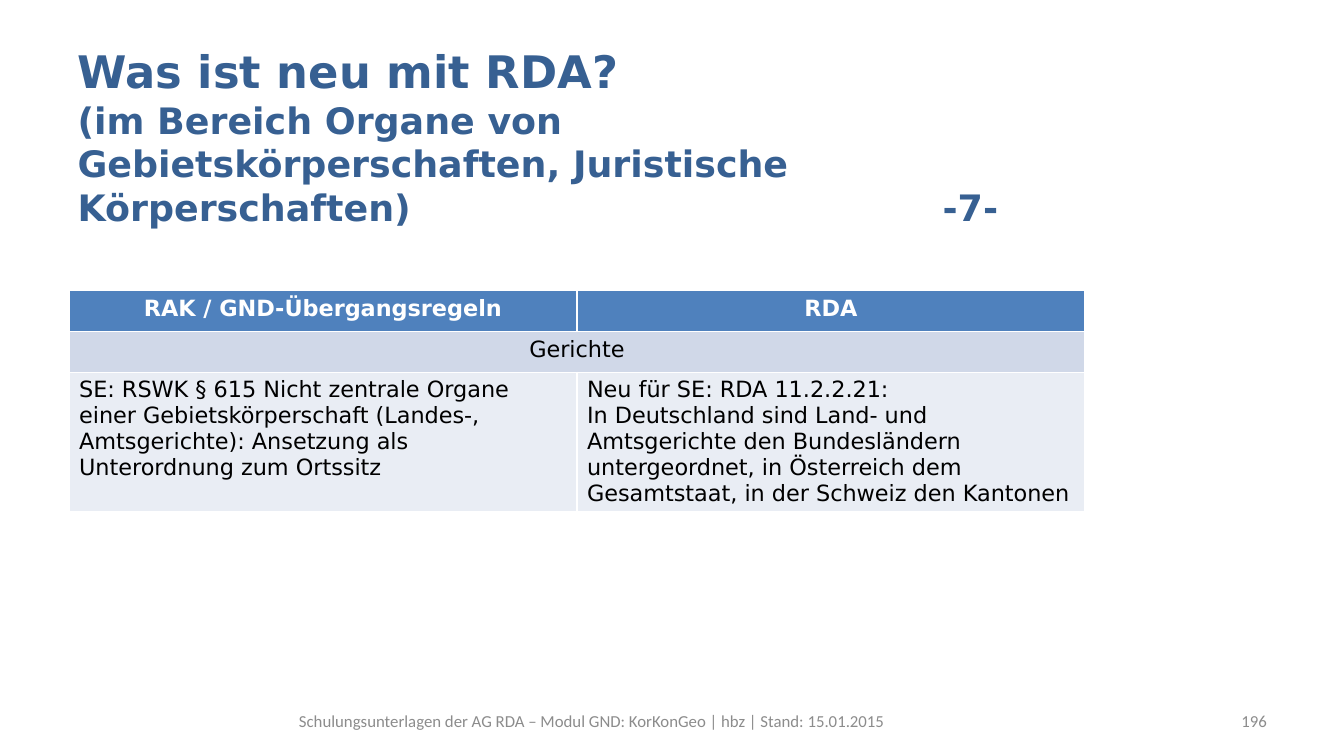
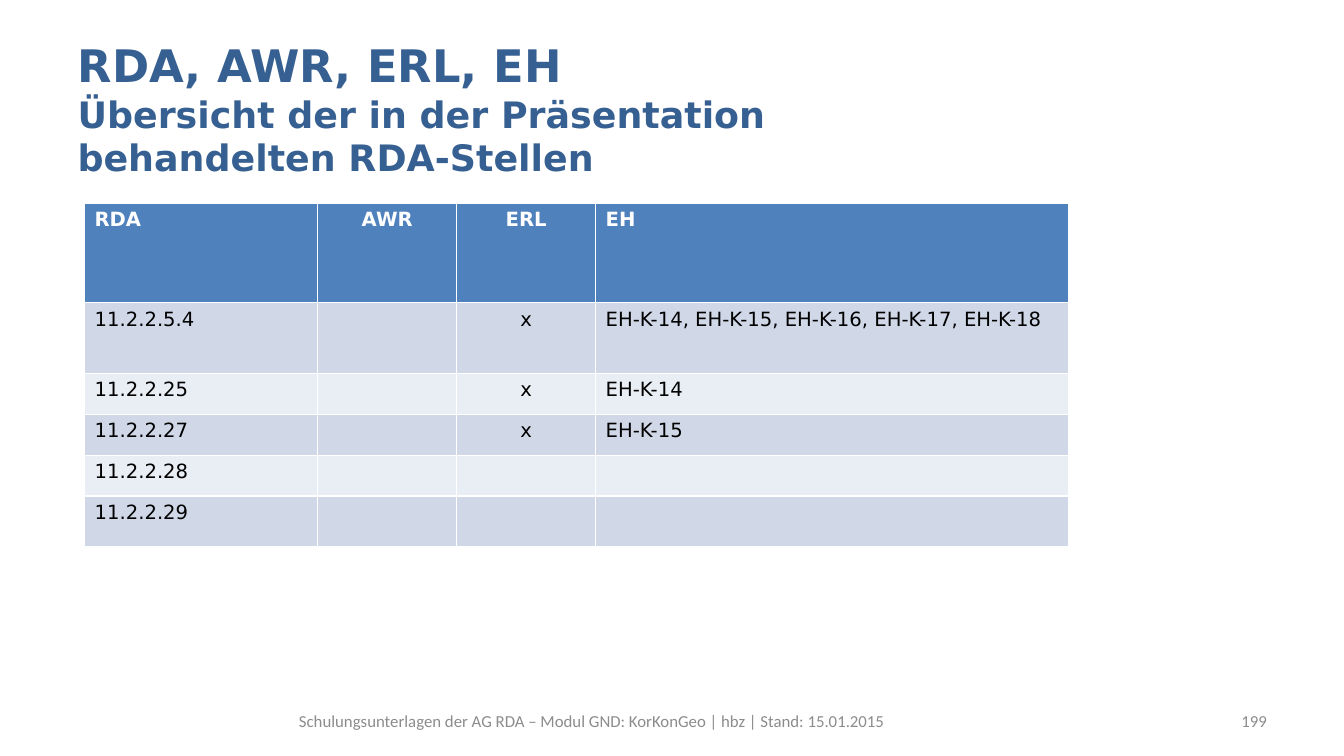
from lxml import etree
from pptx import Presentation
from pptx.dml.color import RGBColor
from pptx.enum.text import MSO_ANCHOR, MSO_AUTO_SIZE, PP_ALIGN
from pptx.oxml.ns import qn
from pptx.util import Cm, Pt

LEFT, CENTER, RIGHT = PP_ALIGN.LEFT, PP_ALIGN.CENTER, PP_ALIGN.RIGHT
MIDDLE = MSO_ANCHOR.MIDDLE
NO_AUTOFIT = MSO_AUTO_SIZE.NONE

TITLE_BLUE = RGBColor(0x37, 0x60, 0x92)
HEADER_BLUE = RGBColor(0x4F, 0x81, 0xBD)
BAND_DARK = RGBColor(0xD0, 0xD8, 0xE8)
BAND_LIGHT = RGBColor(0xE9, 0xED, 0xF4)
FOOTER_GREY = RGBColor(0x8C, 0x8C, 0x8C)
WHITE = RGBColor(0xFF, 0xFF, 0xFF)
BLACK = RGBColor(0x00, 0x00, 0x00)

TEXT_FONT = "DejaVu Sans"
FOOTER_FONT = "Calibri"
FOOTER = "Schulungsunterlagen der AG RDA – Modul GND: KorKonGeo | hbz | Stand: 15.01.2015"
TITLE_ONLY = 5


def style_master_title(presentation):
    """Set the title style that all slides inherit from the master."""
    level = presentation.slide_master.element.find(f".//{qn('p:titleStyle')}/{qn('a:lvl1pPr')}")
    level.set("algn", "l")
    defaults = level.find(qn("a:defRPr"))
    defaults.set("sz", "3200")
    defaults.set("b", "1")
    defaults.find(qn("a:latin")).set("typeface", TEXT_FONT)
    fill = defaults.find(qn("a:solidFill"))
    fill.remove(fill[0])
    etree.SubElement(fill, qn("a:srgbClr"), val=str(TITLE_BLUE))


def add_run(paragraph, text, font_name, size, color, bold=False):
    """Append one formatted run to a paragraph."""
    run = paragraph.add_run()
    run.text = text
    run.font.name = font_name
    run.font.size = Pt(size)
    run.font.color.rgb = color
    run.font.bold = bold


def add_title(slide, height, heading, subtitle, tab=None):
    """Fill the title placeholder with a heading and a smaller subtitle."""
    title = slide.shapes.title
    title.left, title.top, title.width, title.height = Cm(1.7), Cm(0.76), Cm(24.23), Cm(height)
    frame = title.text_frame
    frame.auto_size = NO_AUTOFIT
    frame.vertical_anchor = MIDDLE
    paragraph = frame.paragraphs[0]
    if tab:
        tabs = etree.SubElement(paragraph._p.get_or_add_pPr(), qn("a:tabLst"))
        etree.SubElement(tabs, qn("a:tab"), pos=str(Cm(tab)), algn="l")
    paragraph.add_run().text = heading
    paragraph.add_line_break()
    run = paragraph.add_run()
    run.text = subtitle
    run.font.size = Pt(26)


def add_footer(slide, number):
    """Add the centred footer line and the page number."""
    for left, width, text, alignment in (
        (1.7, 26.44, FOOTER, CENTER),
        (29.46, 2.72, number, RIGHT),
    ):
        box = slide.shapes.add_textbox(Cm(left), Cm(17.65), Cm(width), Cm(1.02))
        frame = box.text_frame
        frame.word_wrap = True
        frame.vertical_anchor = MIDDLE
        paragraph = frame.paragraphs[0]
        paragraph.alignment = alignment
        add_run(paragraph, text, FOOTER_FONT, 12, FOOTER_GREY)


def fill_cell(cell, text, alignment, size, fill, color, bold):
    """Colour a cell and write its lines as paragraphs."""
    cell.fill.solid()
    cell.fill.fore_color.rgb = fill
    if not text:
        return
    frame = cell.text_frame
    for index, line in enumerate(text.split("\n")):
        paragraph = frame.add_paragraph() if index else frame.paragraphs[0]
        paragraph.alignment = alignment
        add_run(paragraph, line, TEXT_FONT, size, color, bold)


def add_banded_table(slide, left, top, widths, heights, rows, size, header_aligns, body_aligns):
    """Add a banded table; a row with a single text spans all columns."""
    frame = slide.shapes.add_table(
        len(rows), len(widths), Cm(left), Cm(top), Cm(sum(widths)), Cm(sum(heights))
    )
    table = frame.table
    for column, width in zip(table.columns, widths):
        column.width = Cm(width)
    for row_index, (texts, height) in enumerate(zip(rows, heights)):
        table.rows[row_index].height = Cm(height)
        is_header = row_index == 0
        if is_header:
            fill, color, aligns = HEADER_BLUE, WHITE, header_aligns
        else:
            fill, color, aligns = (BAND_DARK if row_index % 2 else BAND_LIGHT), BLACK, body_aligns
        if len(texts) == 1:
            table.cell(row_index, 0).merge(table.cell(row_index, len(widths) - 1))
            aligns = [CENTER]
        for column_index, (text, alignment) in enumerate(zip(texts, aligns)):
            cell = table.cell(row_index, column_index)
            fill_cell(cell, text, alignment, size, fill, color, is_header)


def build_comparison_slide(presentation):
    """Build the slide comparing the old rules with RDA."""
    slide = presentation.slides.add_slide(presentation.slide_layouts[TITLE_ONLY])
    add_title(
        slide, 5.36, "Was ist neu mit RDA?",
        "(im Bereich Organe von Gebietskörperschaften, Juristische Körperschaften)\t-7-",
        tab=21.8,
    )
    rows = [
        ("RAK / GND-Übergangsregeln", "RDA"),
        ("Gerichte",),
        (
            "SE: RSWK § 615 Nicht zentrale Organe einer Gebietskörperschaft "
            "(Landes-, Amtsgerichte): Ansetzung als Unterordnung zum Ortssitz",
            "Neu für SE: RDA 11.2.2.21:\n"
            "In Deutschland sind Land- und Amtsgerichte den Bundesländern untergeordnet, "
            "in Österreich dem Gesamtstaat, in der Schweiz den Kantonen",
        ),
    ]
    add_banded_table(
        slide, 1.74, 7.32, [12.8] * 2, [1.03, 1.03, 3.5], rows, 16, [CENTER] * 2, [LEFT] * 2
    )
    add_footer(slide, "196")


def build_overview_slide(presentation):
    """Build the slide listing the RDA passages covered."""
    slide = presentation.slides.add_slide(presentation.slide_layouts[TITLE_ONLY])
    add_title(
        slide, 3.96, "RDA, AWR, ERL, EH",
        "Übersicht der in der Präsentation behandelten RDA-Stellen",
    )
    rows = [
        ("RDA", "AWR", "ERL", "EH"),
        ("11.2.2.5.4", "", "x", "EH-K-14, EH-K-15, EH-K-16, EH-K-17, EH-K-18"),
        ("11.2.2.25", "", "x", "EH-K-14"),
        ("11.2.2.27", "", "x", "EH-K-15"),
        ("11.2.2.28", "", "", ""),
        ("11.2.2.29", "", "", ""),
    ]
    aligns = [LEFT, CENTER, CENTER, LEFT]
    add_banded_table(
        slide, 2.13, 5.13, [5.88, 3.5, 3.5, 11.92],
        [2.5, 1.78, 1.02, 1.02, 1.02, 1.27], rows, 14, aligns, aligns,
    )
    add_footer(slide, "199")


def main():
    """Build and save the presentation."""
    presentation = Presentation()
    presentation.slide_width, presentation.slide_height = Cm(33.87), Cm(19.05)
    style_master_title(presentation)
    build_comparison_slide(presentation)
    build_overview_slide(presentation)
    presentation.save("out.pptx")


if __name__ == "__main__":
    main()
